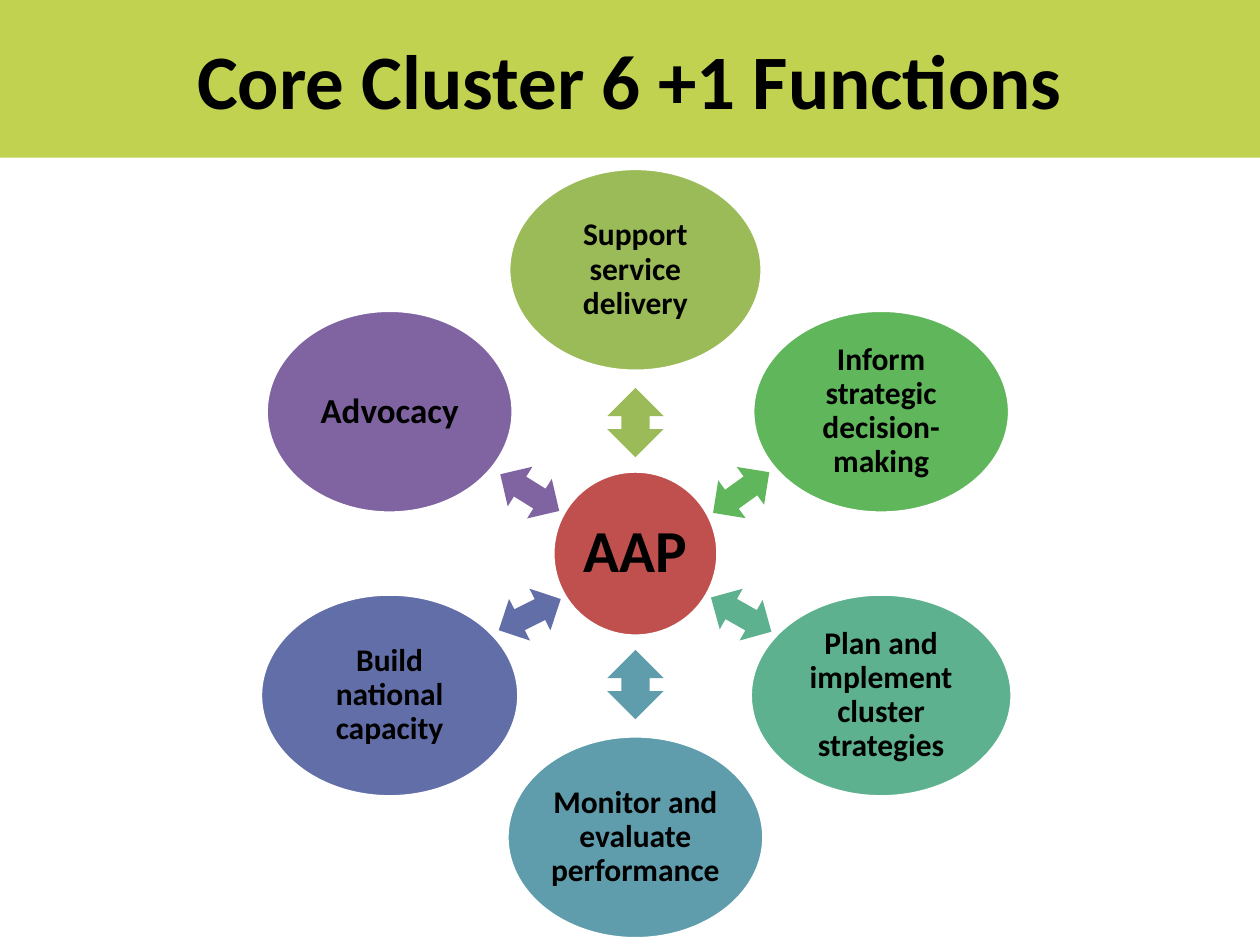
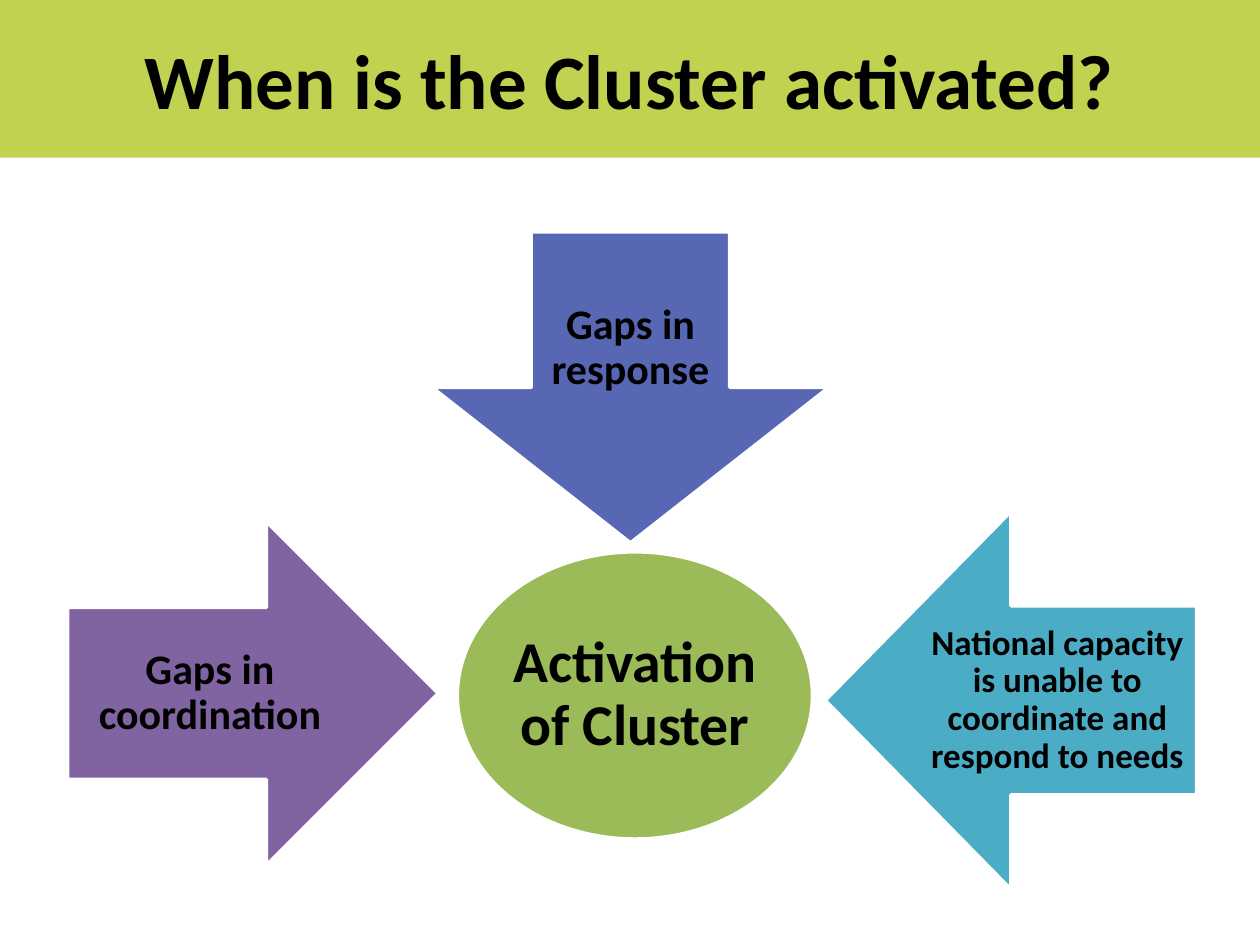
from math import cos, radians, sin

from pptx import Presentation
from pptx.dml.color import RGBColor
from pptx.enum.shapes import MSO_SHAPE
from pptx.enum.text import MSO_ANCHOR, PP_ALIGN
from pptx.util import Cm, Pt

BAND = MSO_SHAPE.RECTANGLE
OVAL = MSO_SHAPE.OVAL
TWIN = MSO_SHAPE.UP_DOWN_ARROW
RIGHT = MSO_SHAPE.RIGHT_ARROW
DOWN = MSO_SHAPE.DOWN_ARROW
LEFT = MSO_SHAPE.LEFT_ARROW
MIDDLE = MSO_ANCHOR.MIDDLE
CENTER = PP_ALIGN.CENTER


class Theme:
    font = "Calibri"
    ink = "000000"
    edge = "FFFFFF"
    band = "C1D150"
    red = "C0504D"
    olive = "9BBB59"
    green = "5FB65B"
    mint = "5DB18E"
    teal = "5F9DAC"
    slate = "626EA7"
    purple = "8064A2"
    blue = "5767B4"
    aqua = "4BACC6"
    title = 44
    hub = 34
    goal = 33
    cause = 24
    large = 20
    body = 18
    rim = 2


WIDE, HIGH = 25.4, 19.05
BAND_H = 3.18
PAD = 0.08

# Wheel geometry in cm: hub centre, ring radius, sizes
HUB_X, HUB_Y, HUB_D = 12.81, 11.16, 3.33
RING, OVAL_H = 5.72, 4.09
ARROW_H = 1.4

# Clockwise from the top: text, colour, size, oval width, arrow tilt
ROLES = [
    ("Support service delivery", Theme.olive, Theme.body, 5.11, 0),
    ("Inform strategic decision-making", Theme.green, Theme.body, 5.18, 54.1),
    ("Plan and implement cluster strategies", Theme.mint, Theme.body, 5.28, 119.5),
    ("Monitor and evaluate performance", Theme.teal, Theme.body, 5.18, 180),
    ("Build national capacity", Theme.slate, Theme.body, 5.21, 243.3),
    ("Advocacy", Theme.purple, Theme.large, 4.98, 301.9),
]

# Text, shape, colour, size, centre and extent in cm
CAUSES = [
    ("Activation of Cluster", OVAL, Theme.olive, Theme.goal,
     (12.8, 14.02, 7.16, 5.79)),
    ("Gaps in coordination", RIGHT, Theme.purple, Theme.cause,
     (5.1, 13.98, 7.47, 6.93)),
    ("Gaps in response", DOWN, Theme.blue, Theme.cause,
     (12.71, 7.81, 8, 6.27)),
    ("National capacity is unable to coordinate and respond to needs",
     LEFT, Theme.aqua, Theme.large, (20.38, 14.12, 7.49, 7.62)),
]


def draw(slide, kind, color, x, y, w, h, rim=True):
    """Add a flat shape centred on (x, y)."""
    shape = slide.shapes.add_shape(
        kind, Cm(x - w / 2), Cm(y - h / 2), Cm(w), Cm(h))
    shape.shadow.inherit = False
    shape.fill.solid()
    shape.fill.fore_color.rgb = RGBColor.from_string(color)
    if rim:
        shape.line.color.rgb = RGBColor.from_string(Theme.edge)
        shape.line.width = Pt(Theme.rim)
    else:
        shape.line.fill.background()
    return shape


def label(shape, text, size, gap=0.9):
    frame = shape.text_frame
    frame.text = text
    frame.word_wrap = True
    frame.vertical_anchor = MIDDLE
    frame.margin_left = frame.margin_right = Cm(PAD)
    frame.margin_top = frame.margin_bottom = Cm(PAD)
    para = frame.paragraphs[0]
    para.alignment = CENTER
    para.line_spacing = gap
    font = para.runs[0].font
    font.name = Theme.font
    font.size = Pt(size)
    font.bold = True
    font.color.rgb = RGBColor.from_string(Theme.ink)


def start(deck, title):
    """Add a blank slide with its title band."""
    slide = deck.slides.add_slide(deck.slide_layouts[6])
    band = draw(slide, BAND, Theme.band, WIDE / 2, BAND_H / 2,
                WIDE, BAND_H, rim=False)
    label(band, title, Theme.title, 1.0)
    return slide


def wheel(deck):
    slide = start(deck, "Core Cluster 6 +1 Functions")
    hub = draw(slide, OVAL, Theme.red, HUB_X, HUB_Y, HUB_D, HUB_D)
    label(hub, "AAP", Theme.hub)
    for i, (text, color, size, width, tilt) in enumerate(ROLES):
        turn = radians(i * 360 / len(ROLES))
        dx, dy = sin(turn), -cos(turn)
        # Upright arrows are wider and sit further out
        reach, thick = (2.64, 1.14) if i % 3 == 0 else (2.46, 0.94)
        arrow = draw(slide, TWIN, color, HUB_X + reach * dx,
                     HUB_Y + reach * dy, thick, ARROW_H, rim=False)
        arrow.rotation = tilt
        oval = draw(slide, OVAL, color, HUB_X + RING * dx,
                    HUB_Y + RING * dy, width, OVAL_H)
        label(oval, text, size)


def causes(deck):
    slide = start(deck, "When is the Cluster activated?")
    for text, kind, color, size, place in CAUSES:
        label(draw(slide, kind, color, *place), text, size)


def main():
    deck = Presentation()
    deck.slide_width, deck.slide_height = Cm(WIDE), Cm(HIGH)
    wheel(deck)
    causes(deck)
    deck.save("out.pptx")


if __name__ == "__main__":
    main()
